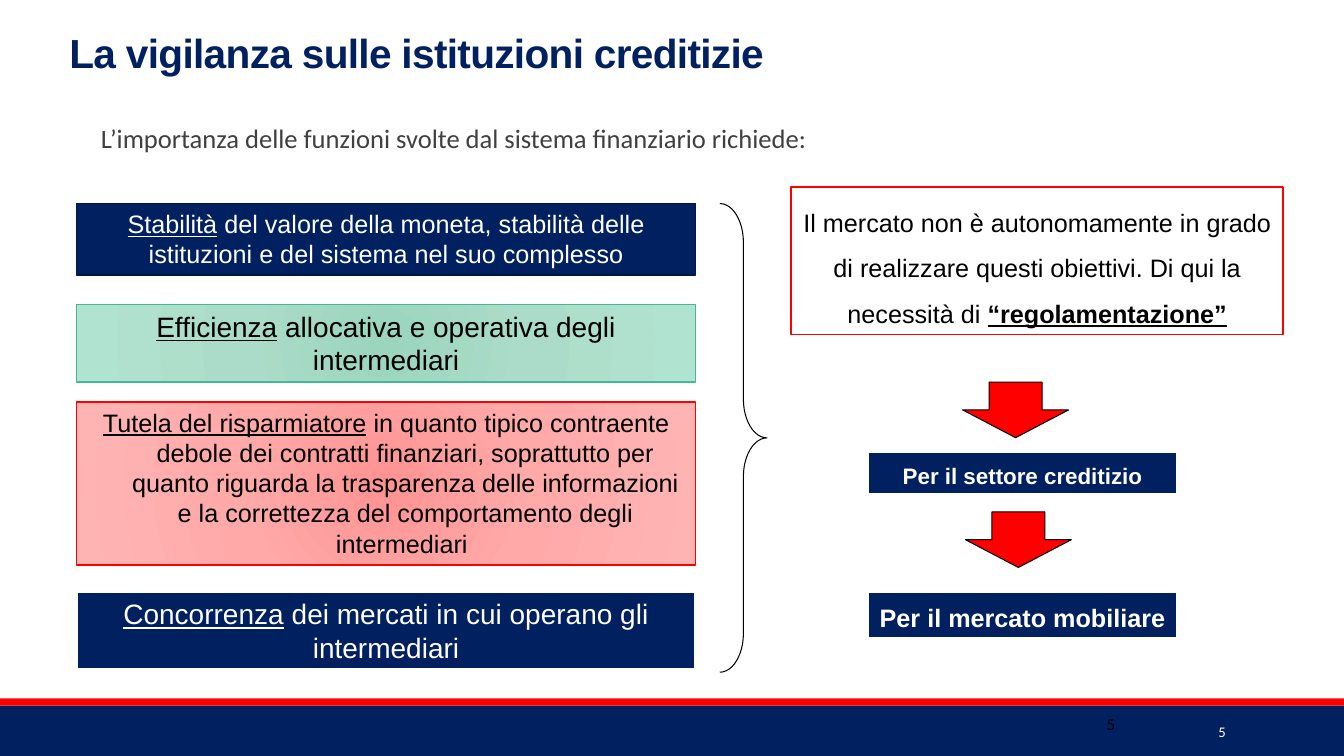
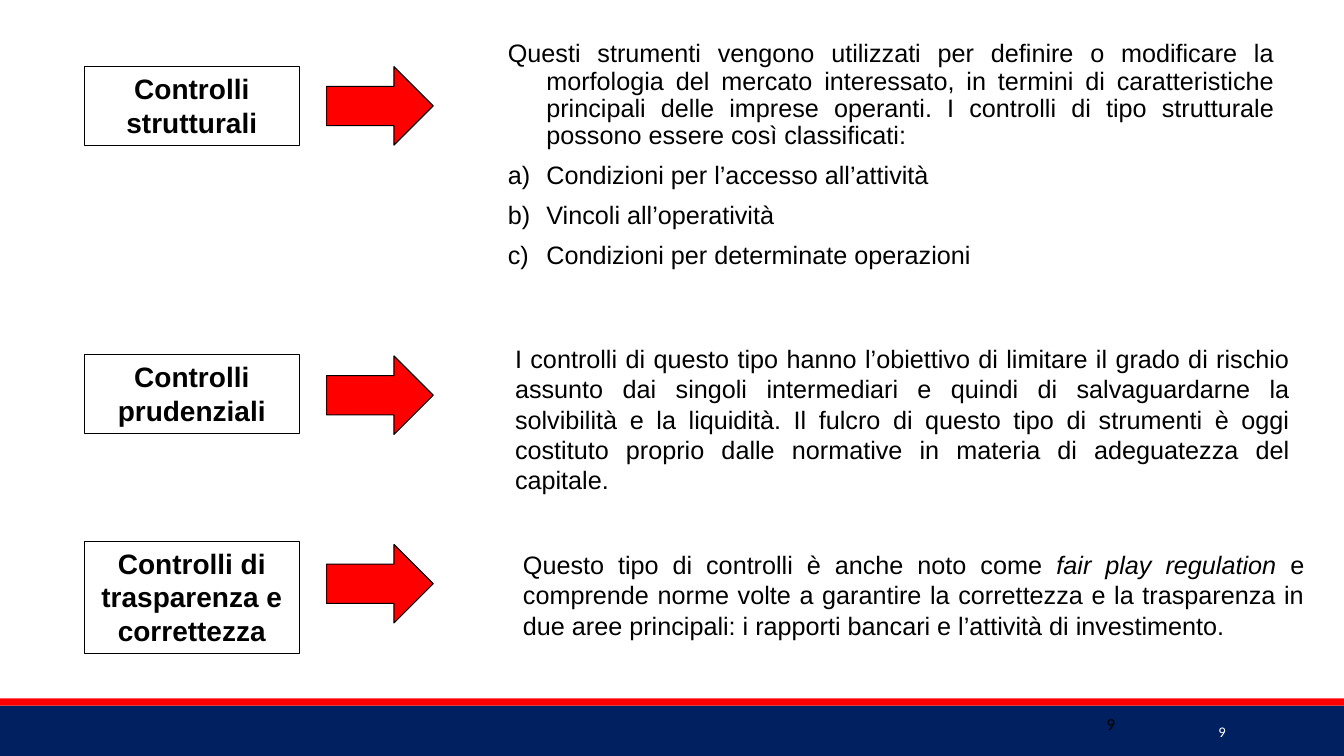
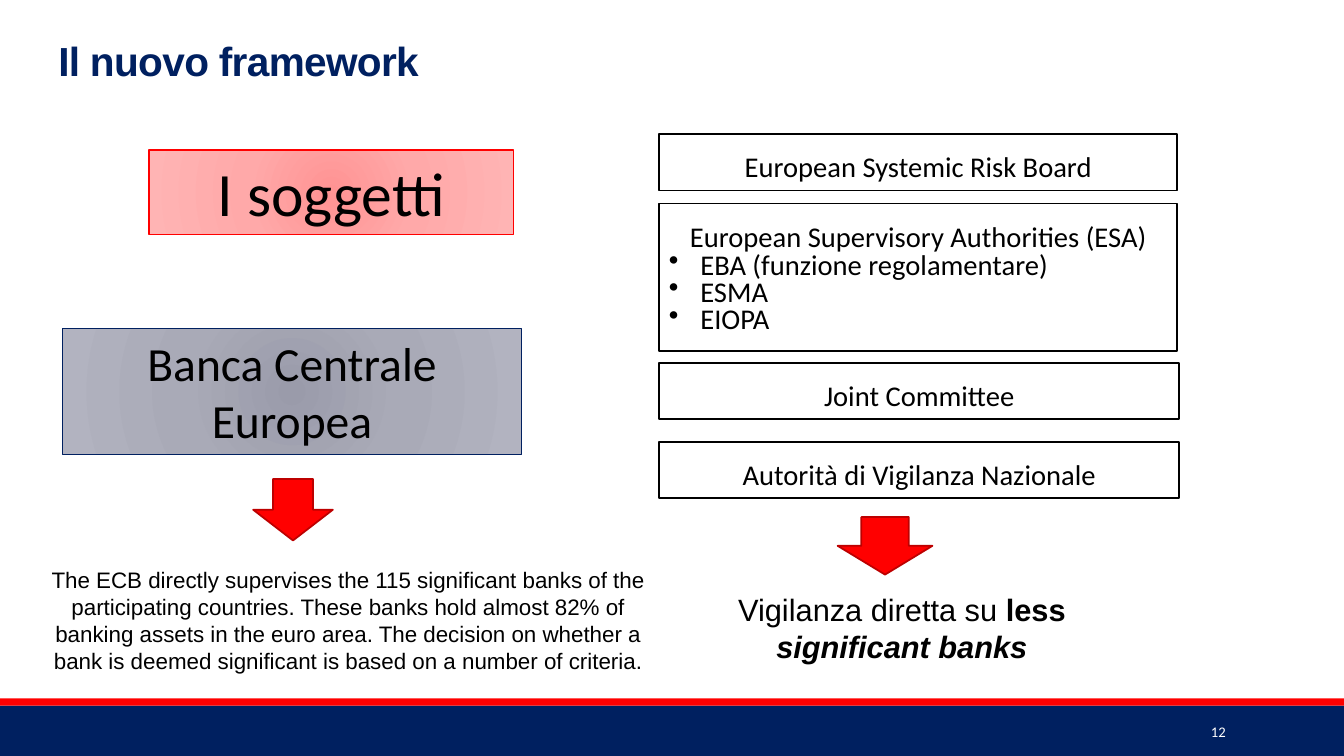
import pptx
import pptx.dml.color
import pptx.enum.shapes
import pptx.enum.text
import pptx.oxml
import pptx.oxml.ns
import pptx.util

Cm = pptx.util.Cm
Pt = pptx.util.Pt
color = pptx.dml.color.RGBColor.from_string
Shape = pptx.enum.shapes.MSO_SHAPE
Align = pptx.enum.text.PP_ALIGN
Anchor = pptx.enum.text.MSO_ANCHOR

# Shared colours and formats
NAVY, RED, DARK_RED = "002060", "FF0000", "BD0000"
BLACK, WHITE, GREY = "000000", "FFFFFF", "404040"
GREEN_GRADIENT = ("9BD5BE", "ABDCC9", "B1E4D0")
RED_GRADIENT = ("FF9393", "FFA9A9", "FFB4B4")
BLUE_GRADIENT = ("9A9BAA", "A9AAB7", "B2B3C0")
CENTER = {"alignment": Align.CENTER}
JUSTIFY = {"alignment": Align.JUSTIFY}
PLAIN, BOLD, UNDERLINE = {}, {"bold": True}, {"underline": True}


def add_box(slide, kind, bounds, fill=None, line=None, width=0.75):
    """Add a shape, or a text box when kind is None; a tuple fill is a radial gradient."""
    lengths = [Cm(value) for value in bounds]
    if kind is None:
        shape = slide.shapes.add_textbox(*lengths)
    else:
        shape = slide.shapes.add_shape(kind, *lengths)
        shape.shadow.inherit = False
        if isinstance(fill, tuple):
            stops = "".join(
                f'<a:gs pos="{position}"><a:srgbClr val="{value}"/></a:gs>'
                for position, value in zip((0, 45000, 100000), fill))
            gradient = pptx.oxml.parse_xml(
                f'<a:gradFill {pptx.oxml.ns.nsdecls("a")} rotWithShape="1">'
                f'<a:gsLst>{stops}</a:gsLst><a:path path="circle">'
                '<a:fillToRect l="100000" t="100000" r="100000" b="100000"/>'
                '</a:path></a:gradFill>')
            shape._element.spPr.find(pptx.oxml.ns.qn("a:prstGeom")).addnext(gradient)
        elif fill:
            shape.fill.solid()
            shape.fill.fore_color.rgb = color(fill)
        else:
            shape.fill.background()
        if line:
            shape.line.color.rgb = color(line)
            shape.line.width = Pt(width)
        else:
            shape.line.fill.background()
    shape.text_frame.word_wrap = True
    shape.text_frame.vertical_anchor = Anchor.TOP
    return shape


def write(shape, paragraphs, size, ink=BLACK, font="Arial"):
    """Fill a shape with (layout, runs) paragraphs; a run is (text, format values)."""
    frame = shape.text_frame
    for index, (layout, runs) in enumerate(paragraphs):
        paragraph = frame.add_paragraph() if index else frame.paragraphs[0]
        properties = paragraph._p.get_or_add_pPr()
        for name, value in layout.items():
            if name == "hanging":
                properties.set("marL", str(Cm(value)))
                properties.set("indent", str(-Cm(value)))
            elif name == "bullet":
                properties.append(pptx.oxml.parse_xml(
                    f'<a:{value} {pptx.oxml.ns.nsdecls("a")}/>'))
            else:
                setattr(paragraph, name, value)
        for text, formats in runs:
            run = paragraph.add_run()
            run.text = text
            run.font.color.rgb = color(ink)
            for name, value in {"name": font, "size": Pt(size), **formats}.items():
                setattr(run.font, name, value)


presentation = pptx.Presentation()
presentation.slide_width, presentation.slide_height = Cm(33.87), Cm(19.05)

# Bands, page numbers and titles
slides = []
for number, second_number, title, title_bounds in (
        ("5", True, "La vigilanza sulle istituzioni creditizie", (1.5, 0.76, 22.83, 1.6)),
        ("9", True, None, None),
        ("12", False, "Il nuovo framework", (1.22, 0.97, 27.94, 4.04))):
    slide = presentation.slides.add_slide(presentation.slide_layouts[6])
    slides.append(slide)
    add_box(slide, Shape.RECTANGLE, (0, 17.78, 33.87, 1.27), NAVY)
    add_box(slide, Shape.RECTANGLE, (0, 17.6, 33.87, 0.18), RED)
    page = add_box(slide, None, (27.51, 17.93, 3.63, 1.02))
    page.text_frame.vertical_anchor = Anchor.MIDDLE
    write(page, [({"alignment": Align.RIGHT}, [(number, PLAIN)])], 10.5, WHITE, "Calibri")
    if second_number:
        write(add_box(slide, None, (27.64, 17.87, 3, 0.8)),
              [({}, [(number, PLAIN)])], 12, BLACK, "Calibri")
    if title:
        heading = add_box(slide, None, title_bounds)
        write(heading, [({"line_spacing": 0.85}, [(title, BOLD)])], 29, NAVY)
        heading.text_frame.paragraphs[0].runs[0]._r.get_or_add_rPr().set("spc", "-50")

supervision, controls, framework = slides

# Supervision: introduction
introduction = add_box(supervision, None, (0, 3.05, 22.86, 1.27))
introduction.text_frame.margin_left = introduction.text_frame.margin_right = 0
write(introduction, [({**CENTER, "line_spacing": 0.9}, [
    ("L’importanza delle funzioni svolte dal sistema finanziario richiede:", PLAIN)])],
    19, GREY, "Calibri")

# Supervision: goals
for top, height, fill, line, width, ink, size, layout, goal, rest in (
        (5.13, 1.8, NAVY, "001847", 1.25, WHITE, 18, CENTER, "Stabilità",
         " del valore della moneta, stabilità delle istituzioni e del sistema nel suo complesso"),
        (7.67, 1.96, GREEN_GRADIENT, "42BA97", 1, BLACK, 20, CENTER, "Efficienza",
         " allocativa e operativa degli intermediari"),
        (10.13, 4.11, RED_GRADIENT, RED, 1, BLACK, 18, {**CENTER, "hanging": 0.97},
         "Tutela del risparmiatore",
         " in quanto tipico contraente debole dei contratti finanziari, soprattutto per quanto "
         "riguarda la trasparenza delle informazioni e la correttezza del comportamento degli "
         "intermediari "),
        (14.91, 1.96, NAVY, WHITE, 2, WHITE, 20, CENTER, "Concorrenza",
         " dei mercati in cui operano gli intermediari")):
    box = add_box(supervision, Shape.RECTANGLE, (1.93, top, 15.6, height), fill, line, width)
    write(box, [(layout, [(goal, UNDERLINE), (rest, PLAIN)])], size, ink)

# Supervision: brace and regulation
brace = add_box(supervision, Shape.RIGHT_BRACE, (18.14, 5.13, 1.19, 11.81), line=BLACK)
brace.adjustments[0], brace.adjustments[1] = 0.82, 0.5
regulation = add_box(supervision, Shape.RECTANGLE, (19.94, 4.72, 12.4, 3.71), WHITE, RED, 1.25)
write(regulation, [({**CENTER, "line_spacing": 1.5}, [
    ("Il mercato non è autonomamente in grado di realizzare questi obiettivi. "
     "Di qui la necessità di ", PLAIN),
    ("“regolamentazione”", {**BOLD, **UNDERLINE})])], 18)

# Supervision: sectors, each below its arrow
for arrow_left, arrow_top, top, height, size, sector in (
        (24.26, 9.63, 11.38, 1.07, 16, "Per il settore creditizio"),
        (24.33, 12.9, 14.91, 1.19, 18, "Per il mercato mobiliare")):
    box = add_box(supervision, Shape.RECTANGLE, (21.87, top, 7.8, height), NAVY, WHITE, 2)
    write(box, [({**CENTER, "line_spacing": 1.2}, [(sector, BOLD)])], size, WHITE)
    add_box(supervision, Shape.DOWN_ARROW, (arrow_left, arrow_top, 2.67, 1.4), RED, BLACK)

# Controls: label, arrow and description in each row
structural = {**JUSTIFY, "hanging": 0.97, "line_spacing": 0.9}
lettered = {**structural, "bullet": 'buAutoNum type="alphaLcParenR"', "space_before": Pt(9)}
for label, top, height, arrow_top, text_bounds, paragraphs in (
        ("Controlli strutturali", 1.68, 1.98, 1.68, (12.55, 0.91, 19.81, 6.25), [
            (structural, [(
                "Questi strumenti vengono utilizzati per definire o modificare la morfologia del "
                "mercato interessato, in termini di caratteristiche principali delle imprese "
                "operanti. I controlli di tipo strutturale possono essere così classificati: ",
                PLAIN)]),
            (lettered, [("Condizioni per l’accesso all’attività", PLAIN)]),
            (lettered, [("Vincoli all’operatività", PLAIN)]),
            (lettered, [("Condizioni per determinate operazioni", PLAIN)])]),
        ("Controlli prudenziali", 8.94, 1.98, 8.97, (12.73, 8.53, 20.02, 4.11), [
            (JUSTIFY, [(
                "I controlli di questo tipo hanno l’obiettivo di limitare il grado di rischio "
                "assunto dai singoli intermediari e quindi di salvaguardarne la solvibilità e la "
                "liquidità. Il fulcro di questo tipo di strumenti è oggi costituto proprio dalle "
                "normative in materia di adeguatezza del capitale.", PLAIN)])]),
        ("Controlli di trasparenza e correttezza", 13.64, 2.82, 13.72,
         (12.93, 13.72, 20.19, 2.57), [
            (JUSTIFY, [
                ("Questo tipo di controlli è anche noto come ", PLAIN),
                ("fair play regulation", {"italic": True}),
                (" e comprende norme volte a garantire la correttezza e la trasparenza in due "
                 "aree principali: i rapporti bancari e l’attività di investimento.", PLAIN)])])):
    box = add_box(controls, Shape.RECTANGLE, (2.13, top, 5.41, height), line=BLACK)
    write(box, [(CENTER, [(label, BOLD)])], 20)
    add_box(controls, Shape.RIGHT_ARROW, (8.23, arrow_top, 2.69, 1.98), RED, BLACK)
    write(add_box(controls, None, text_bounds), paragraphs, 18)

# Framework: subjects
for bounds, fill, line, size, subject in (
        ((3.76, 3.78, 9.19, 2.13), RED_GRADIENT, RED, 44, "I soggetti"),
        ((1.57, 8.28, 11.58, 3.18), BLUE_GRADIENT, NAVY, 34, "Banca Centrale Europea")):
    box = add_box(framework, Shape.RECTANGLE, bounds, fill, line, 1)
    write(box, [(CENTER, [(subject, PLAIN)])], size, BLACK, "Calibri")

# Framework: authorities
bulleted = {"alignment": Align.LEFT, "hanging": 0.79, "line_spacing": 0.8,
            "bullet": 'buChar char="•"'}
for top, height, width, authority, members in (
        (3.38, 1.42, 13.06, "European Systemic Risk Board", ()),
        (5.13, 3.71, 13.06, "European Supervisory Authorities (ESA)",
         ("EBA (funzione regolamentare)", "ESMA", "EIOPA")),
        (9.14, 1.42, 13.11, "Joint Committee", ()),
        (11.13, 1.42, 13.11, "Autorità di Vigilanza Nazionale", ())):
    box = add_box(framework, Shape.RECTANGLE, (16.61, top, width, height), WHITE, BLACK, 1.25)
    write(box, [({**CENTER, "line_spacing": 1.3}, [(authority, PLAIN)])]
          + [(bulleted, [(member, PLAIN)]) for member in members], 20.4, BLACK, "Calibri")

# Framework: arrows and who supervises whom
for arrow_bounds, text_bounds, size, runs in (
        ((6.38, 12.07, 2.01, 1.55), (0.94, 14.15, 15.67, 3), 16, [
            ("The ECB directly supervises the 115 significant banks of the participating "
             "countries. These banks hold almost 82% of banking assets in the euro area. The "
             "decision on whether a bank is deemed significant is based on a number of "
             "criteria.", PLAIN)]),
        ((21.11, 13.03, 2.39, 1.45), (16.61, 14.76, 12.24, 2.13), 22, [
            ("Vigilanza diretta su ", PLAIN), ("less ", BOLD),
            ("significant banks", {**BOLD, "italic": True})])):
    add_box(framework, Shape.DOWN_ARROW, arrow_bounds, RED, DARK_RED, 1.25)
    write(add_box(framework, None, text_bounds), [(CENTER, runs)], size)

presentation.save("out.pptx")
